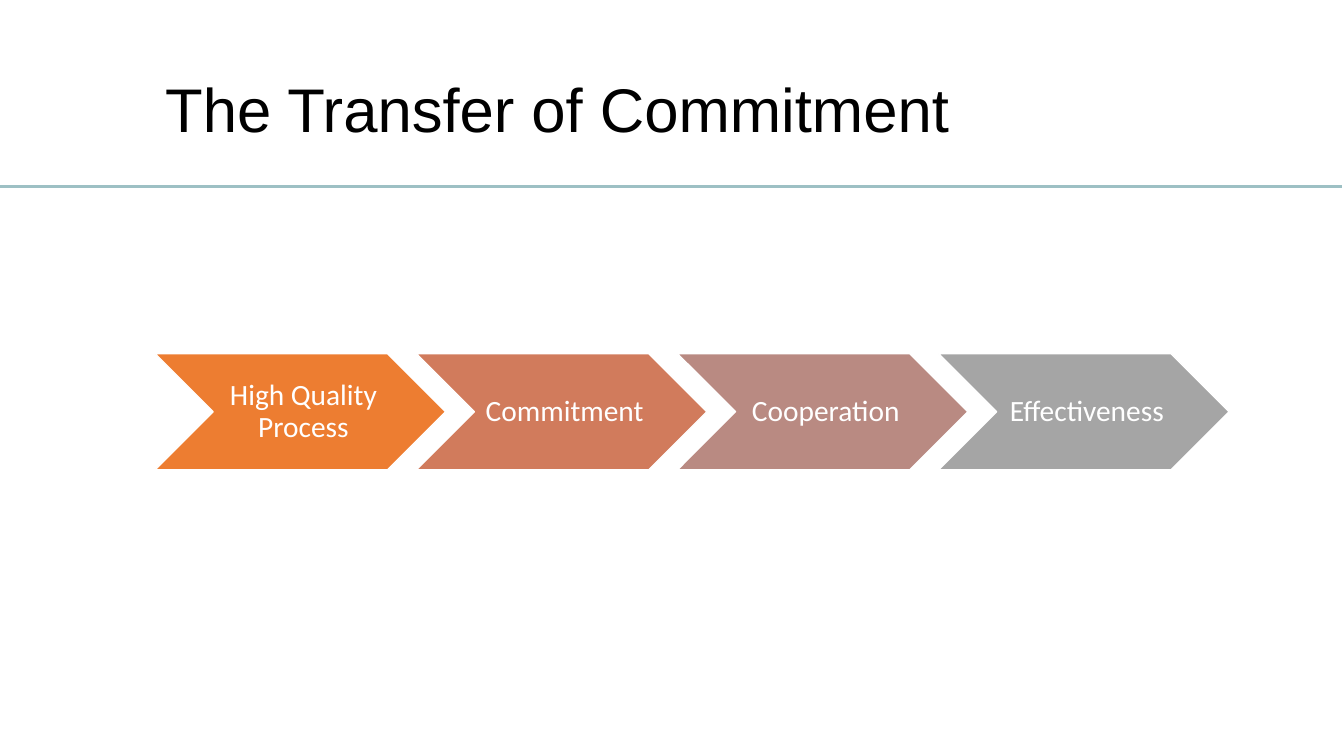
from lxml import etree
from pptx import Presentation
from pptx import util as u
from pptx.dml.color import RGBColor
from pptx.enum import shapes, text
from pptx.oxml.ns import qn

PX = 9144  # EMU in one px, at 100 px to the inch
COLORS = {
    "title": "000000",
    "rule": "9DC0C4",
    "white": "FFFFFF",
    "process": "ED7D31",
    "commitment": "D17B5C",
    "cooperation": "B98A82",
    "effectiveness": "A5A5A5",
}


def px(*lengths):
    return [u.Emu(length * PX) for length in lengths]


def write_text(shape, content, *, size, font, color, align, insets):
    frame = shape.text_frame
    frame.word_wrap = True
    frame.vertical_anchor = text.MSO_ANCHOR.MIDDLE
    (frame.margin_left, frame.margin_top,
     frame.margin_right, frame.margin_bottom) = px(*insets)
    paragraph = frame.paragraphs[0]
    paragraph.alignment = align
    paragraph.line_spacing = 0.9
    run = paragraph.add_run()
    run.text = content
    run.font.size = u.Pt(size)
    run.font.name = font
    run.font.color.rgb = RGBColor.from_string(COLORS[color])


class SlideBuilder:
    title_font = "Arial"
    step_font = "Calibri"

    def __init__(self, presentation):
        self.slide = presentation.slides.add_slide(presentation.slide_layouts[6])

    def rule(self, left, right, top):
        line = self.slide.shapes.add_connector(
            shapes.MSO_CONNECTOR.STRAIGHT, *px(left, top, right, top))
        line.line.color.rgb = RGBColor.from_string(COLORS["rule"])
        line.line.width = u.Pt(2)
        properties = line._element.spPr
        etree.SubElement(properties, qn("a:effectLst"))

    def title(self, content, *box):
        shape = self.slide.shapes.add_textbox(*px(*box))
        write_text(shape, content, size=44, font=self.title_font, color="title",
                   align=text.PP_ALIGN.LEFT, insets=(10, 5, 10, 5))

    def chevron(self, content, color, *box):
        shape = self.slide.shapes.add_shape(
            shapes.MSO_SHAPE.CHEVRON, *px(*box))
        shape.shadow.inherit = False
        shape.fill.solid()
        shape.fill.fore_color.rgb = RGBColor.from_string(COLORS[color])
        shape.line.color.rgb = RGBColor.from_string(COLORS["white"])
        shape.line.width = u.Pt(1)
        write_text(shape, content, size=21, font=self.step_font, color="white",
                   align=text.PP_ALIGN.CENTER, insets=(9, 3, 3, 3))


def main():
    presentation = Presentation()
    presentation.slide_width, presentation.slide_height = px(1333, 750)
    builder = SlideBuilder(presentation)

    # Heading and the rule below it
    builder.rule(-2, 1331, 185)
    builder.title("The Transfer of Commitment", 154, 40, 1088, 144)

    # Process chain, one chevron per step
    steps = [
        ("High Quality Process", "process"),
        ("Commitment", "commitment"),
        ("Cooperation", "cooperation"),
        ("Effectiveness", "effectiveness"),
    ]
    left, pitch = 154, 259
    for index, (label, color) in enumerate(steps):
        builder.chevron(label, color, left + index * pitch, 351, 288, 115)

    presentation.save("out.pptx")


if __name__ == "__main__":
    main()
